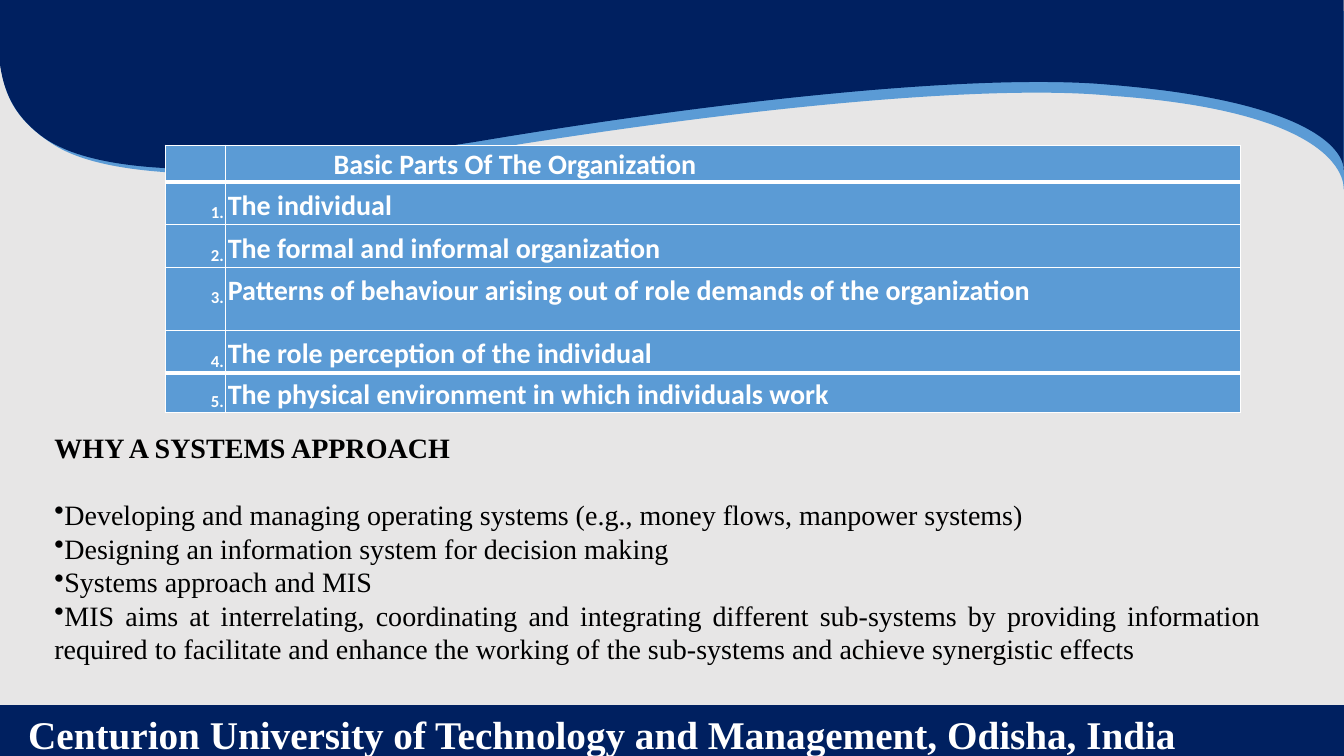
from lxml.etree import SubElement
from pptx import Presentation
from pptx.dml.color import RGBColor
from pptx.enum.shapes import MSO_SHAPE as Shape
from pptx.enum.text import MSO_ANCHOR as Anchor, PP_ALIGN as Align
from pptx.oxml.ns import qn
from pptx.util import Emu, Inches, Pt

COLUMNS, ROWS = 133.33, 75
GRID = Inches(0.1)
NAVY, SKY, PAPER, WHITE, BLACK = "002060", "5B9BD5", "E7E6E6", "FFFFFF", "000000"
SERIF, SANS = "Times New Roman", "Calibri"

SKY_WAVE = [
    [(0, 1)],
    [(-0.1, 6.6), (-0.5, 10.7), (5.4, 14.4)],
    [(13.8, 19.7), (39.3, 16.2), (46.7, 15.1)],
    [(75.8, 10.3), (99.1, 8.4), (110.2, 9.5)],
    [(137.5, 11.4), (132.6, 20.9), (133.4, 18.4)],
    [(133.4, 1.1)],
    [(88.1, 1), (45.5, 1), (0, 1)],
]
NAVY_WAVE = [
    [(-0.3, 0)],
    [(-0.3, 6.5), (-0.1, 10.2), (4, 13.4)],
    [(12.3, 19.9), (39.6, 15.2), (47, 14.1)],
    [(76.2, 9.2), (98.9, 7.4), (110, 8.4)],
    [(137.1, 10.6), (132.8, 18.6), (133.3, 16.5)],
    [(133.3, 0)],
    [(87.9, -0.1), (46.1, 0), (-0.3, 0)],
]
ORGANIZATION_PARTS = [
    "The individual",
    "The formal and informal organization",
    "Patterns of behaviour arising out of role demands of the organization",
    "The role perception of the individual",
    "The physical environment in which individuals work",
]
SYSTEMS_POINTS = [
    "Developing and managing operating systems (e.g., money flows, manpower systems)",
    "Designing an information system for decision making",
    "Systems approach and MIS",
    "MIS aims at interrelating, coordinating and integrating different sub-systems by "
    "providing information required to facilitate and enhance the working of the "
    "sub-systems and achieve synergistic effects",
]


def cells(count):
    return Emu(round(count * GRID))


def color(value):
    return RGBColor.from_string(value)


def paint(target, value):
    target.fill.solid()
    target.fill.fore_color.rgb = color(value)


def style(paragraph, font, size, value, bold=False):
    for run in paragraph.runs:
        run.font.name = font
        run.font.size = Pt(size)
        run.font.bold = bold
        run.font.color.rgb = color(value)


def set_margins(frame, left, top=0, right=0, bottom=0):
    frame.margin_left, frame.margin_top = cells(left), cells(top)
    frame.margin_right, frame.margin_bottom = cells(right), cells(bottom)


def bend(wave, segments):
    lines = list(wave._element.iter(qn("a:lnTo")))
    for line, segment in zip(lines, segments):
        if len(segment) == 3:
            line.tag = qn("a:cubicBezTo")
            for point in list(line):
                line.remove(point)
            for x, y in segment:
                SubElement(line, qn("a:pt"), x=str(cells(x) - wave.left),
                           y=str(cells(y) - wave.top))


def add_wave(slide, outline, fill):
    (start,), *segments = outline
    builder = slide.shapes.build_freeform(*map(cells, start))
    ends = [tuple(map(cells, segment[-1])) for segment in segments]
    builder.add_line_segments(ends, close=True)
    wave = builder.convert_to_shape()
    bend(wave, segments)
    paint(wave, fill)
    wave.line.fill.background()
    wave.shadow.inherit = False


def add_footer(slide, text):
    footer = slide.shapes.add_shape(
        Shape.RECTANGLE, cells(-0.2), cells(69.95), cells(133.7), cells(5.7))
    paint(footer, NAVY)
    footer.line.fill.background()
    footer.shadow.inherit = False
    frame = footer.text_frame
    frame.text = text
    frame.vertical_anchor = Anchor.MIDDLE
    set_margins(frame, 3, 0.5, 0.5, 0.5)
    university = frame.paragraphs[0]
    university.alignment = Align.LEFT
    style(university, SERIF, 28, WHITE, bold=True)


def set_borders(cell, top, bottom):
    properties = cell._tc.get_or_add_tcPr()
    for side, width in (("L", 1), ("R", 1), ("T", top), ("B", bottom)):
        border = SubElement(properties, qn(f"a:ln{side}"), w=str(Pt(width)))
        fill = SubElement(border, qn("a:solidFill"))
        SubElement(fill, qn("a:srgbClr"), val=WHITE)


def fill_cell(cell, text, size, indent, drop, spacing, align=Align.LEFT):
    cell.text = text
    set_margins(cell, indent, drop, 0.2)
    label = cell.text_frame.paragraphs[0]
    label.alignment = align
    label.line_spacing = Pt(spacing)
    style(label, SANS, size, WHITE, bold=True)


def add_parts_table(slide, title, parts):
    heights = [3.6, 4.23, 4.23, 6.28, 4.23, 3.6]
    table = slide.shapes.add_table(
        len(heights), 2, cells(16.4), cells(14.4), cells(106.7), cells(sum(heights))).table
    table.first_row = table.horz_banding = False
    for column, width in zip(table.columns, (6, 100.7)):
        column.width = cells(width)
    last = len(parts)
    for index, (row, height) in enumerate(zip(table.rows, heights)):
        row.height = cells(height)
        for cell in row.cells:
            set_borders(cell, 3 if index in (1, last) else 1,
                        3 if index in (0, last - 1) else 1)
            paint(cell, SKY)
    fill_cell(table.cell(0, 0), "", 12, 0, 0, 13.3)
    fill_cell(table.cell(0, 1), title, 20, 10.7, 1.8, 13.3)
    for number, part in enumerate(parts, 1):
        drop, spacing = (2.1, 12.8) if number == last else (2.2, 13.5)
        fill_cell(table.cell(number, 0), f"{number}.", 12, 0.7, drop, spacing, Align.RIGHT)
        fill_cell(table.cell(number, 1), part, 20, 0.2, drop, spacing)


def add_systems_text(slide, heading, points):
    box = slide.shapes.add_textbox(cells(3.6), cells(41.9), cells(125.2), cells(26.2))
    frame = box.text_frame
    frame.word_wrap = True
    frame.vertical_anchor = Anchor.MIDDLE
    set_margins(frame, 1.8, 0.6, 3.7, 1.9)
    frame.text = "\n".join([heading, *points])
    for index, paragraph in enumerate(frame.paragraphs):
        paragraph.alignment = Align.JUSTIFY
        if index == 0:
            paragraph.space_after = Pt(24)
        else:
            SubElement(paragraph._p.get_or_add_pPr(), qn("a:buChar"), char="•")
        style(paragraph, SERIF, 20, BLACK, bold=index == 0)


def main():
    deck = Presentation()
    deck.slide_width, deck.slide_height = cells(COLUMNS), cells(ROWS)
    slide = deck.slides.add_slide(deck.slide_layouts[6])
    paint(slide.background, PAPER)
    add_wave(slide, SKY_WAVE, SKY)
    add_wave(slide, NAVY_WAVE, NAVY)
    add_footer(slide, "Centurion University of Technology and Management, Odisha, India")
    add_parts_table(slide, "Basic Parts Of The Organization", ORGANIZATION_PARTS)
    add_systems_text(slide, "WHY A SYSTEMS APPROACH", SYSTEMS_POINTS)
    deck.save("out.pptx")


if __name__ == "__main__":
    main()
